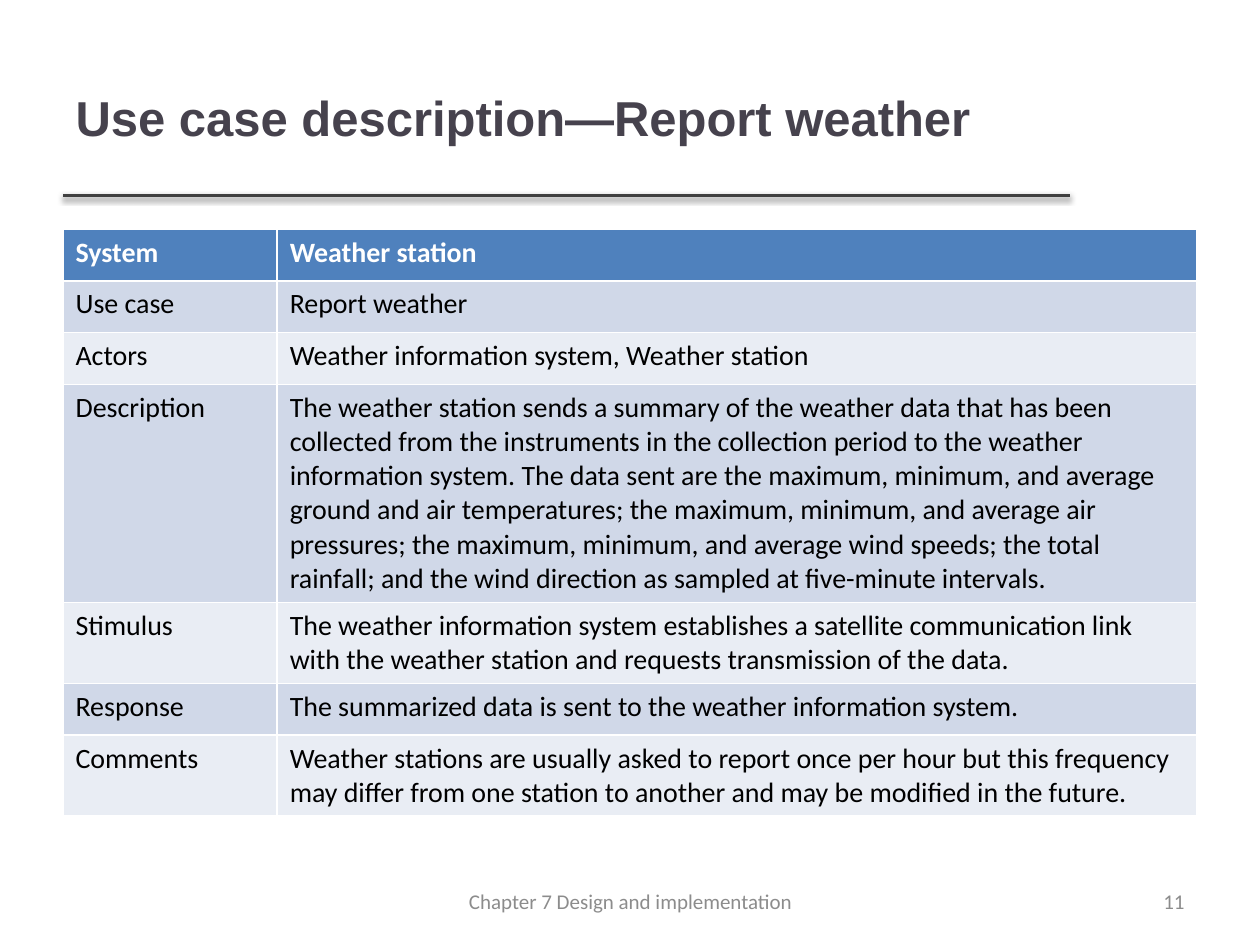
"""Build a use case description slide: title, rule, table and footer."""
from lxml import etree
from pptx import Presentation, util as u
from pptx.dml.color import RGBColor
from pptx.enum import shapes, text
from pptx.oxml.ns import qn

WIDE, HIGH = 10, 7.5
EDGE = 0.05 * WIDE
INK = {"title": "46424D", "rule": "404040", "head": "4F81BD", "white": "FFFFFF",
       "odd": "D0D8E8", "even": "E9EDF4", "body": "000000", "foot": "8C8C8C"}
COLS = (1.7, 7.3)
ROW = 0.41
ROWS = (
    ("System", "Weather station"),
    ("Use case", "Report weather"),
    ("Actors", "Weather information system, Weather station"),
    ("Description",
     "The weather station sends a summary of the weather data that has been "
     "collected from the instruments in the collection period to the weather "
     "information system. The data sent are the maximum, minimum, and average "
     "ground and air temperatures; the maximum, minimum, and average air "
     "pressures; the maximum, minimum, and average wind speeds; the total "
     "rainfall; and the wind direction as sampled at five-minute intervals."),
    ("Stimulus",
     "The weather information system establishes a satellite communication link "
     "with the weather station and requests transmission of the data."),
    ("Response", "The summarized data is sent to the weather information system."),
    ("Comments",
     "Weather stations are usually asked to report once per hour but this frequency "
     "may differ from one station to another and may be modified in the future."),
)


def tint(name):
    """Return a palette colour."""
    return RGBColor.from_string(INK[name])


def write(frame, words, size, ink, face="Calibri", bold=False, align=text.PP_ALIGN.LEFT):
    """Put one formatted run into a text frame."""
    para = frame.paragraphs[0]
    para.alignment = align
    run = para.add_run()
    run.text = words
    font = run.font
    font.name, font.size, font.bold = face, u.Pt(size), bold
    font.color.rgb = tint(ink)


def add_title(slide, words):
    """Place and fill the title placeholder."""
    title = slide.shapes.title
    title.left, title.top = u.Inches(EDGE), u.Inches(0.04 * HIGH)
    title.width, title.height = u.Inches(7.98), u.Inches(1.25)
    frame = title.text_frame
    frame.auto_size = text.MSO_AUTO_SIZE.NONE
    frame.vertical_anchor = text.MSO_ANCHOR.MIDDLE
    write(frame, words, 28, "title", "Arial", True)


def add_rule(slide, top, end):
    """Draw the rule below the title with its soft shadow."""
    rule = slide.shapes.add_connector(
        shapes.MSO_CONNECTOR.STRAIGHT,
        u.Inches(EDGE), u.Inches(top), u.Inches(end), u.Inches(top))
    rule.line.color.rgb, rule.line.width = tint("rule"), u.Pt(2)
    fx = etree.SubElement(rule._element.spPr, qn("a:effectLst"))
    glow = etree.SubElement(fx, qn("a:outerShdw"), blurRad=str(u.Pt(3.1)),
                            dist=str(u.Pt(1.6)), dir="5400000", rotWithShape="0")
    shade = etree.SubElement(glow, qn("a:srgbClr"), val=INK["body"])
    etree.SubElement(shade, qn("a:alpha"), val="38000")


def add_grid(slide, top):
    """Add the use case table with a header and banded rows."""
    grid = slide.shapes.add_table(
        len(ROWS), len(COLS), u.Inches(EDGE), u.Inches(top),
        u.Inches(sum(COLS)), u.Inches(ROW * len(ROWS))).table
    for col, width in zip(grid.columns, COLS):
        col.width = u.Inches(width)
    for r, row in enumerate(ROWS):
        grid.rows[r].height = u.Inches(ROW)
        fill = "head" if r == 0 else ("even", "odd")[r % 2]
        for c, words in enumerate(row):
            cell = grid.cell(r, c)
            cell.fill.solid()
            cell.fill.fore_color.rgb = tint(fill)
            write(cell.text_frame, words, 16, "body" if r else "white", bold=r == 0)


def add_foot(slide, left, width, words, align):
    """Add a grey footer text."""
    box = slide.shapes.add_textbox(
        u.Inches(left), u.Inches(6.95), u.Inches(width), u.Inches(0.4))
    frame = box.text_frame
    frame.word_wrap = True
    frame.vertical_anchor = text.MSO_ANCHOR.MIDDLE
    write(frame, words, 12, "foot", align=align)


def main():
    """Build and save the slide."""
    deck = Presentation()
    deck.slide_width, deck.slide_height = u.Inches(WIDE), u.Inches(HIGH)
    slide = deck.slides.add_slide(deck.slide_layouts[5])
    add_rule(slide, 1.55, 8.49)
    add_title(slide, "Use case description—Report weather")
    add_grid(slide, 1.82)
    add_foot(slide, 7.17, 2.33, "11", text.PP_ALIGN.RIGHT)
    add_foot(slide, 3.42, 3.17, "Chapter 7 Design and implementation", text.PP_ALIGN.CENTER)
    deck.save("out.pptx")


if __name__ == "__main__":
    main()
